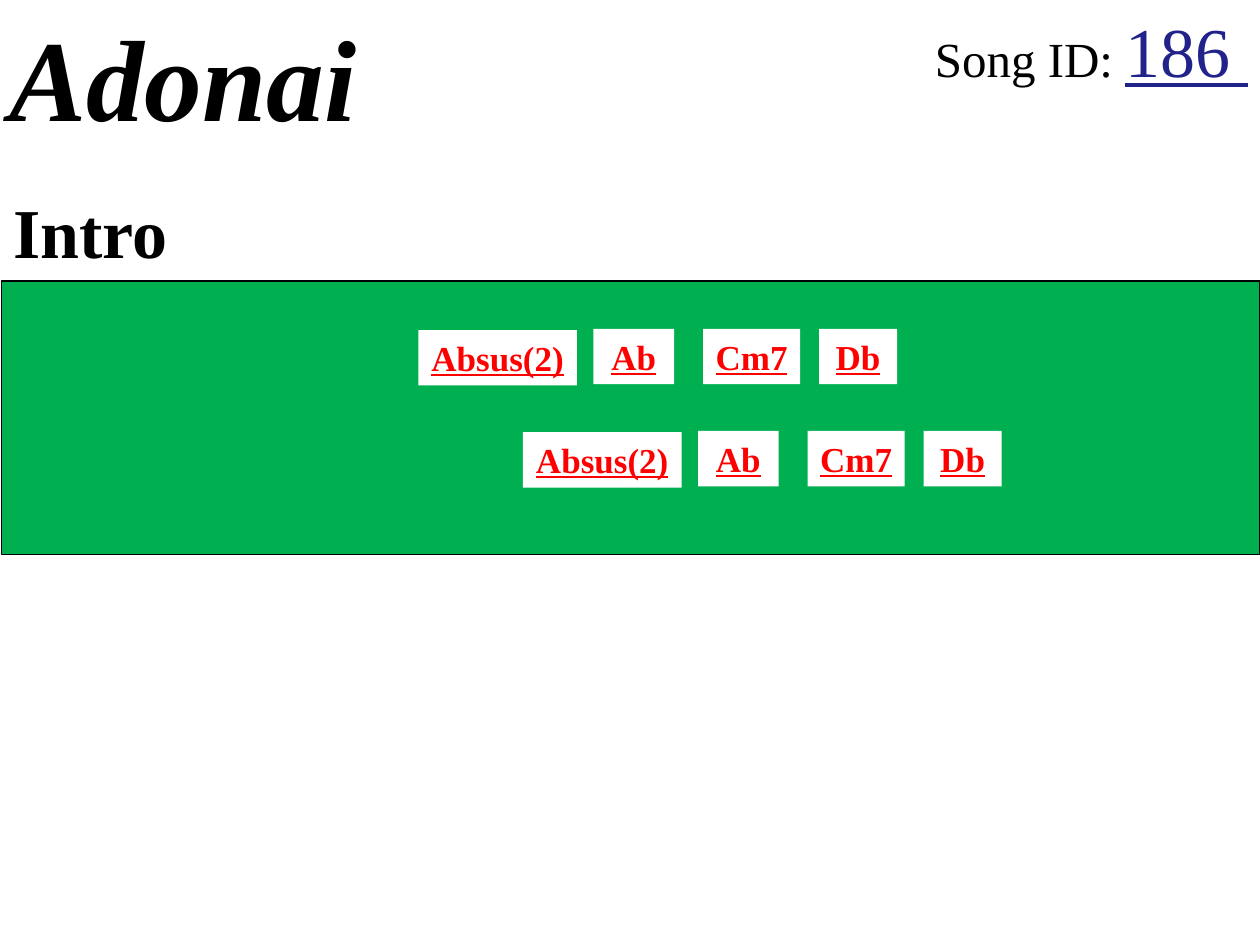
from pptx import Presentation
from pptx.dml.color import RGBColor
from pptx.enum.shapes import MSO_SHAPE as Shape
from pptx.enum.text import MSO_ANCHOR as Anchor, MSO_AUTO_SIZE as Fit, PP_ALIGN as Align
from pptx.util import Inches, Pt

FONT = "Times New Roman"
WHITE = RGBColor(255, 255, 255)
BLACK = RGBColor(0, 0, 0)
GREEN = RGBColor(0x00, 0xB0, 0x50)
RED = RGBColor(255, 0, 0)
NAVY = RGBColor(0x22, 0x22, 0x8B)

# Chord name, offset from the row's corner, and width
CHORDS = [
    ("Absus(2)", 0, 0.01, 1.26),
    ("Ab", 1.39, 0, 0.64),
    ("Cm7", 2.26, 0, 0.77),
    ("Db", 3.18, 0, 0.62),
]


def add_box(slide, left, top, width, height, fill):
    box = slide.shapes.add_shape(
        Shape.RECTANGLE, Inches(left), Inches(top), Inches(width), Inches(height))
    box.shadow.inherit = False
    box.fill.solid()
    box.fill.fore_color.rgb = fill
    box.line.fill.background()
    return box


def add_label(slide, left, top, width, height, align, wrap=True):
    frame = add_box(slide, left, top, width, height, WHITE).text_frame
    frame.word_wrap = wrap
    frame.auto_size = Fit.SHAPE_TO_FIT_TEXT
    frame.vertical_anchor = Anchor.TOP
    para = frame.paragraphs[0]
    para.alignment = align
    return para


def add_run(para, text, size, color=BLACK, bold=False, italic=False, line=False):
    run = para.add_run()
    run.text = text
    font = run.font
    font.name, font.size, font.color.rgb = FONT, Pt(size), color
    font.bold, font.italic, font.underline = bold, italic, line
    # Space above grows with the largest text in the line
    para.space_before = Pt(round(size * 0.11, 1))


def add_header(slide, left, top, width):
    part = 3.99
    title = add_label(slide, left - 0.02, top, part, 1.21, Align.LEFT)
    add_run(title, "Adonai", 66, bold=True, italic=True)
    song = add_label(slide, left + width - part, top + 0.01, part, 0.77, Align.RIGHT)
    add_run(song, "Song ID: ", 28)
    add_run(song, "186 ", 40, NAVY, line=True)


def add_row(slide, left, top):
    for name, dx, dy, width in CHORDS:
        para = add_label(slide, left + dx, top + dy, width, 0.44, Align.CENTER, wrap=False)
        add_run(para, name, 20, RED, bold=True, line=True)


def add_intro(slide, left, top, width):
    # Green panel
    panel = add_box(slide, left, top + 0.78, width, 2.17, GREEN)
    panel.line.color.rgb = BLACK
    panel.line.width = Pt(0.75)
    # Two rows of chords, the second one indented
    for step in range(2):
        add_row(slide, left + 3.31 + step * 0.83, top + 1.16 + step * 0.81)
    # Heading
    head = add_label(slide, left, top, 3.33, 0.77, Align.LEFT)
    add_run(head, "Intro", 40, bold=True)


def main():
    deck = Presentation()
    deck.slide_width, deck.slide_height = Inches(10), Inches(7.5)
    slide = deck.slides.add_slide(deck.slide_layouts[6])
    add_header(slide, 0, 0, 10)
    add_intro(slide, 0.01, 1.45, 9.99)
    deck.save("out.pptx")


if __name__ == "__main__":
    main()
